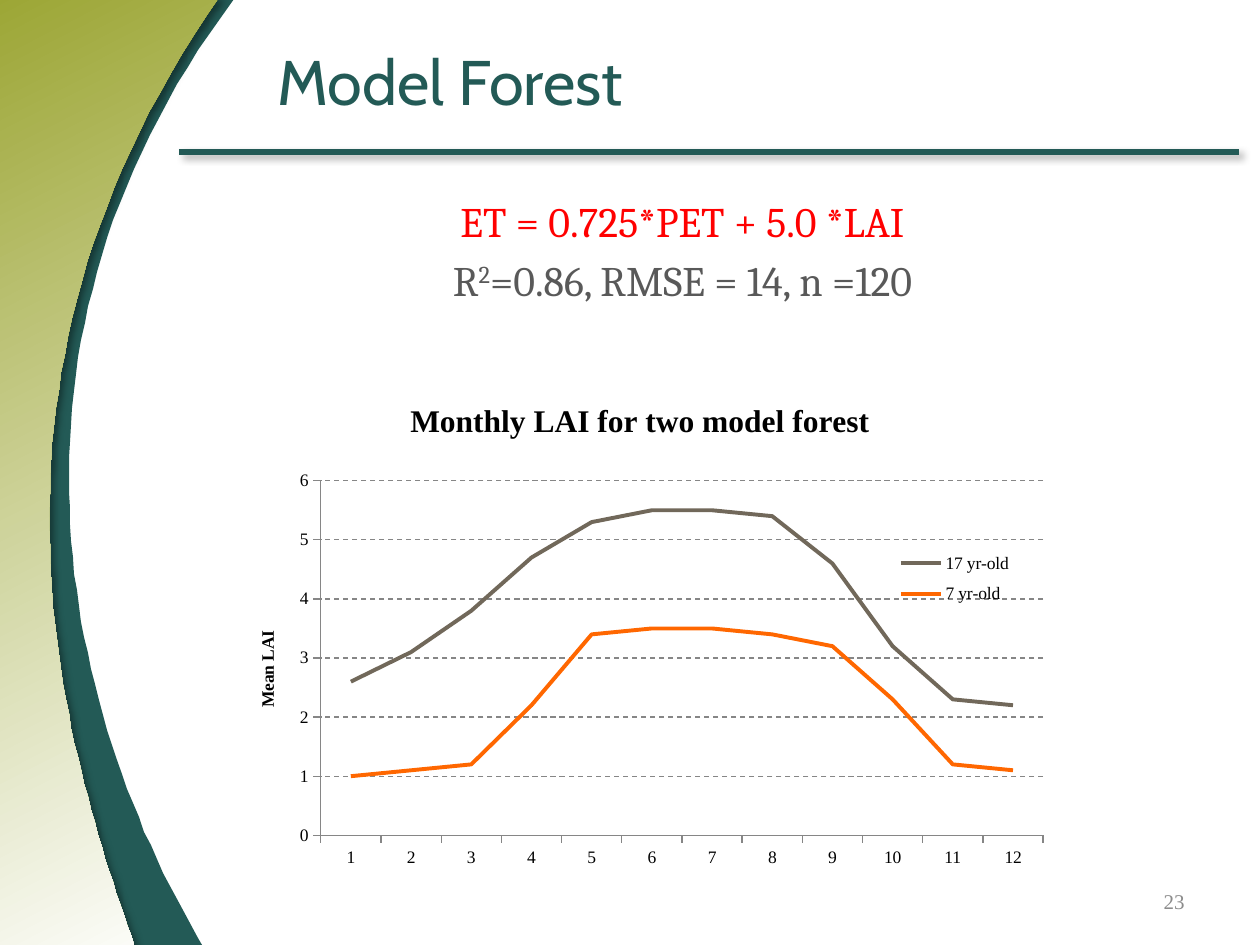
from lxml.etree import SubElement
from pptx import Presentation
from pptx.chart.data import CategoryChartData
from pptx.dml.color import RGBColor
from pptx.enum.chart import XL_CHART_TYPE, XL_LEGEND_POSITION, XL_TICK_MARK
from pptx.enum.dml import MSO_LINE
from pptx.enum.shapes import MSO_CONNECTOR
from pptx.enum.text import MSO_ANCHOR, PP_ALIGN
from pptx.oxml import parse_xml
from pptx.oxml.ns import nsdecls, qn
from pptx.util import Pt

SCALE = 914400 / 126
TEAL, OLIVE, WHITE = "235A56", "9CA635", "FFFFFF"
RED, GRAY, BLACK, AXIS_GRAY = "FF0000", "595959", "000000", "868686"
SERIES = [
    ("17 yr-old", "71685A", (2.6, 3.1, 3.8, 4.7, 5.3, 5.5, 5.5, 5.4, 4.6, 3.2, 2.3, 2.2)),
    ("7 yr-old", "FF6700", (1, 1.1, 1.2, 2.2, 3.4, 3.5, 3.5, 3.4, 3.2, 2.3, 1.2, 1.1)),
]


def px(length):
    return round(length * SCALE)


def color(value):
    return RGBColor.from_string(value)


def style_font(font, name, size, value, bold=False):
    font.name = name
    font.size = Pt(size)
    font.color.rgb = color(value)
    font.bold = bold


def add_run(paragraph, text, name, size, value):
    run = paragraph.add_run()
    run.text = text
    style_font(run.font, name, size, value)
    return run


def add_text_box(slide, left, top, width, height, anchor=MSO_ANCHOR.TOP):
    box = slide.shapes.add_textbox(px(left), px(top), px(width), px(height))
    frame = box.text_frame
    frame.word_wrap = True
    frame.vertical_anchor = anchor
    return frame


def add_shadow(shape):
    properties = shape.element.spPr
    for effects in properties.findall(qn("a:effectLst")):
        properties.remove(effects)
    properties.append(parse_xml(
        f'<a:effectLst {nsdecls("a")}><a:outerShdw blurRad="50800" dist="38100" '
        'dir="2700000" algn="tl" rotWithShape="0"><a:srgbClr val="000000">'
        '<a:alpha val="40000"/></a:srgbClr></a:outerShdw></a:effectLst>'))


def curve_points(start, control_1, control_2, end, steps=60):
    points = []
    for step in range(steps + 1):
        t = step / steps
        weights = ((1 - t) ** 3, 3 * t * (1 - t) ** 2, 3 * t ** 2 * (1 - t), t ** 3)
        points.append(tuple(
            sum(weight * value for weight, value in zip(weights, values))
            for values in zip(start, control_1, control_2, end)))
    return points


def add_swoosh(slide, curve, corners):
    points = curve_points(*curve) + corners
    builder = slide.shapes.build_freeform(*points[0], scale=SCALE)
    builder.add_line_segments(points[1:], close=True)
    shape = builder.convert_to_shape()
    shape.shadow.inherit = False
    shape.line.fill.background()
    return shape


def add_decoration(slide):
    band = add_swoosh(slide, [(234, -1), (-19, 335), (58, 704), (205, 950)],
                      [(0, 945), (-1, -1)])
    band.fill.solid()
    band.fill.fore_color.rgb = color(TEAL)

    panel = add_swoosh(slide, [(220, -4), (-53, 384), (67, 753), (134, 945)],
                       [(0, 946), (-2, -5)])
    panel.fill.gradient()
    panel.fill.gradient_angle = 297
    for stop, position, value in zip(panel.fill.gradient_stops, (0, 1), (OLIVE, WHITE)):
        stop.position = position
        stop.color.rgb = color(value)
    add_shadow(panel)

    rule = slide.shapes.add_connector(
        MSO_CONNECTOR.STRAIGHT, px(179), px(152), px(1239), px(152))
    rule.line.color.rgb = color(TEAL)
    rule.line.width = Pt(3)
    add_shadow(rule)


def add_title(slide):
    title = slide.shapes.title
    title.left, title.top, title.width, title.height = px(265), px(0), px(975), px(160)
    title.text_frame.vertical_anchor = MSO_ANCHOR.MIDDLE
    paragraph = title.text_frame.paragraphs[0]
    paragraph.alignment = PP_ALIGN.LEFT
    add_run(paragraph, "Model Forest", "Cabin", 36, TEAL)


def add_equation(slide):
    frame = add_text_box(slide, 147, 189, 1071, 130)
    equation, statistics = frame.paragraphs[0], frame.add_paragraph()
    equation.alignment = statistics.alignment = PP_ALIGN.CENTER
    statistics.space_before = Pt(5)
    add_run(equation, "ET = 0.725*PET + 5.0 *LAI", "Cambria", 24, RED)
    add_run(statistics, "R", "Cambria", 24, GRAY)
    exponent = add_run(statistics, "2", "Cambria", 24, GRAY)
    exponent.font._element.set("baseline", "30000")
    add_run(statistics, "=0.86, RMSE = 14, n =120", "Cambria", 24, GRAY)


def set_layout(parent, index, x, y, width, height, inner=False):
    for layout in parent.findall(qn("c:layout")):
        parent.remove(layout)
    layout = parse_xml(f'<c:layout {nsdecls("c")}><c:manualLayout/></c:layout>')
    settings = [("xMode", "edge"), ("yMode", "edge"),
                ("x", x), ("y", y), ("w", width), ("h", height)]
    if inner:
        settings.insert(0, ("layoutTarget", "inner"))
    for tag, value in settings:
        SubElement(layout[0], qn(f"c:{tag}")).set("val", str(value))
    parent.insert(index, layout)


def set_chart_title(text_frame, text, size):
    run = text_frame.paragraphs[0].add_run()
    run.text = text
    style_font(run.font, "Times New Roman", size, BLACK, bold=True)


def style_axis(axis):
    axis.major_tick_mark = XL_TICK_MARK.OUTSIDE
    axis.minor_tick_mark = XL_TICK_MARK.NONE
    axis.format.line.color.rgb = color(AXIS_GRAY)
    axis.format.line.width = Pt(0.75)


def add_lai_chart(slide):
    data = CategoryChartData()
    data.categories = [str(month) for month in range(1, 13)]
    for name, _, values in SERIES:
        data.add_series(name, values)
    chart = slide.shapes.add_chart(
        XL_CHART_TYPE.LINE, px(220), px(378), px(840), px(514), data).chart
    style_font(chart.font, "Times New Roman", 10, BLACK)
    chart.has_title = True
    set_chart_title(chart.chart_title.text_frame, "Monthly LAI for two model forest", 18)

    plot = chart.plots[0]
    plot.vary_by_categories = False
    for series, (_, value, _) in zip(plot.series, SERIES):
        series.smooth = False
        series.format.line.color.rgb = color(value)
        series.format.line.width = Pt(2.25)

    style_axis(chart.category_axis)
    value_axis = chart.value_axis
    style_axis(value_axis)
    value_axis.minimum_scale, value_axis.maximum_scale = 0, 6
    value_axis.major_unit = 1
    value_axis.has_major_gridlines = True
    gridline = value_axis.major_gridlines.format.line
    gridline.color.rgb = color(AXIS_GRAY)
    gridline.width = Pt(0.75)
    gridline.dash_style = MSO_LINE.DASH
    set_chart_title(value_axis.axis_title.text_frame, "Mean LAI", 10)

    chart.has_legend = True
    chart.legend.position = XL_LEGEND_POSITION.RIGHT
    chart.legend.include_in_layout = False
    set_layout(chart.element.find(f".//{qn('c:plotArea')}"), 0,
               0.12, 0.2, 0.86, 0.69, inner=True)
    set_layout(chart.element.find(f".//{qn('c:legend')}"), 1, 0.8, 0.32, 0.15, 0.14)


def add_slide_number(slide):
    frame = add_text_box(slide, 903, 876, 294, 50, MSO_ANCHOR.MIDDLE)
    paragraph = frame.paragraphs[0]
    paragraph.alignment = PP_ALIGN.RIGHT
    add_run(paragraph, "23", "Times New Roman", 12, "8C8C8C")


def main():
    presentation = Presentation()
    presentation.slide_width, presentation.slide_height = px(1260), px(945)
    slide = presentation.slides.add_slide(presentation.slide_layouts[5])
    add_decoration(slide)
    add_title(slide)
    add_equation(slide)
    add_slide_number(slide)
    add_lai_chart(slide)
    presentation.save("out.pptx")


if __name__ == "__main__":
    main()
